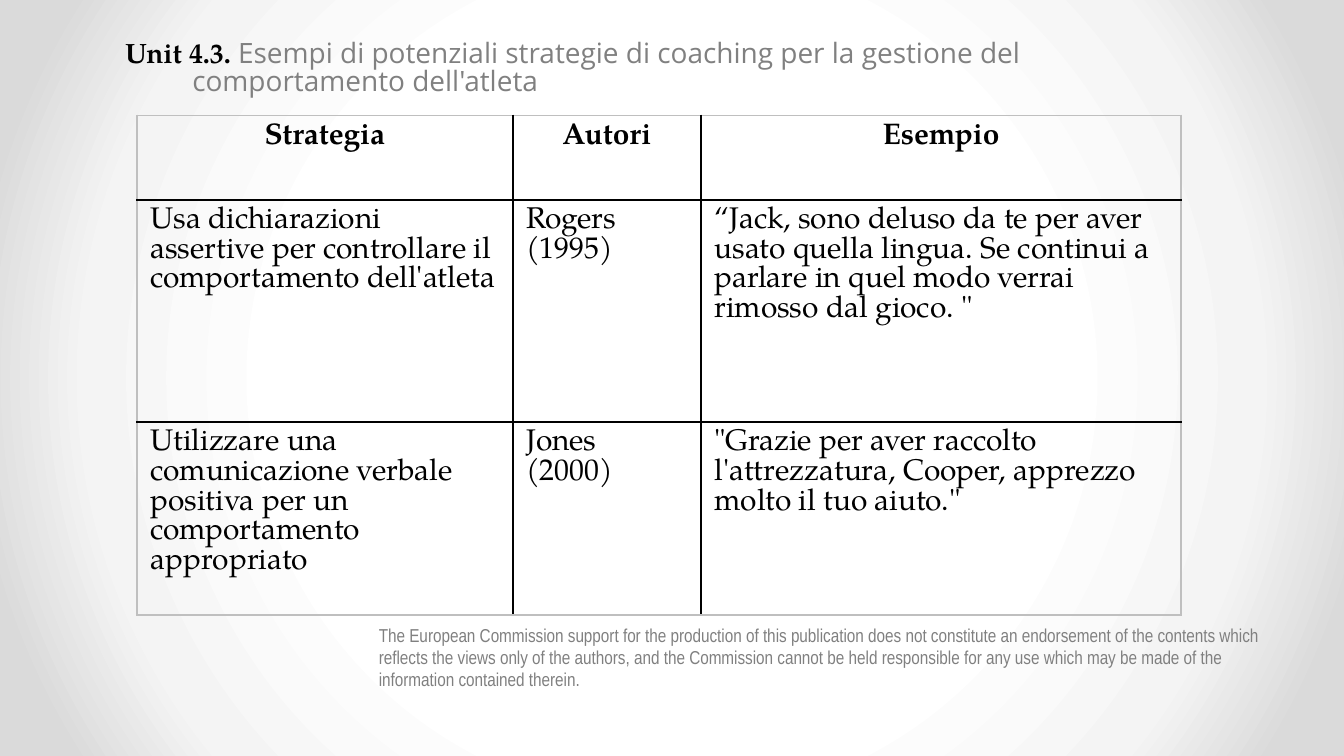
from pptx import Presentation
from pptx.dml.color import RGBColor
from pptx.enum.text import MSO_ANCHOR, MSO_AUTO_SIZE, PP_ALIGN
from pptx.oxml import parse_xml
from pptx.util import Cm, Pt

LEFT, CENTER = PP_ALIGN.LEFT, PP_ALIGN.CENTER
MIDDLE, TOP = MSO_ANCHOR.MIDDLE, MSO_ANCHOR.TOP
NO_AUTOFIT = MSO_AUTO_SIZE.NONE
NAMESPACES = (
    'xmlns:a="http://schemas.openxmlformats.org/drawingml/2006/main" '
    'xmlns:p="http://schemas.openxmlformats.org/presentationml/2006/main"'
)

# Content
UNIT = "Unit 4.3. "
TOPIC = ("Esempi di potenziali strategie di coaching per la gestione del "
         "comportamento dell'atleta")
ROWS = [
    ("Strategia", "Autori", "Esempio"),
    ("Usa dichiarazioni assertive per controllare il comportamento dell'atleta",
     "Rogers (1995)",
     "“Jack, sono deluso da te per aver usato quella lingua. Se continui a "
     'parlare in quel modo verrai rimosso dal gioco. "'),
    ("Utilizzare una comunicazione verbale positiva per un comportamento appropriato",
     "Jones (2000)",
     '''"Grazie per aver raccolto l'attrezzatura, Cooper, apprezzo molto il tuo aiuto."'''),
]
DISCLAIMER = (
    "The European Commission support for the production of this publication does "
    "not constitute an endorsement of the contents which reflects the views only "
    "of the authors, and the Commission cannot be held responsible for any use "
    "which may be made of the information contained therein."
)

# Layout in centimetres
TITLE_BOX = (2.11, 0.53, 20.65, 1.55)
DISCLAIMER_BOX = (6.91, 11.66, 17.6, 1.7)
TABLE_ORIGIN = (2.59, 2.18)
COLUMN_WIDTHS = (7.1, 3.56, 9.07)
ROW_HEIGHTS = (1.6, 4.2, 3.65)

THEME = {
    "serif": "TeX Gyre Pagella", "sans": "Open Sans", "narrow": "Arial Narrow",
    "ink": "000000", "muted": "808080", "frame": "BFBFBF",
    "title": 15, "table": 16, "disclaimer": 10,
    "background": [(50, "FFFFFF"), (76, "F4F4F4"), (92, "DADADA")],
}


def add_run(paragraph, text, font, size, color, bold=False):
    run = paragraph.add_run()
    run.text = text
    run.font.name = THEME[font]
    run.font.size = Pt(THEME[size])
    run.font.bold = bold
    run.font.color.rgb = RGBColor.from_string(THEME[color])


def set_background(slide):
    stops = "".join(
        f'<a:gs pos="{position * 1000}"><a:srgbClr val="{color}"/></a:gs>'
        for position, color in THEME["background"])
    slide.element.cSld.insert(0, parse_xml(
        f'<p:bg {NAMESPACES}><p:bgPr><a:gradFill rotWithShape="1">'
        f'<a:gsLst>{stops}</a:gsLst><a:path path="circle">'
        '<a:fillToRect l="50000" t="50000" r="50000" b="50000"/></a:path>'
        '</a:gradFill><a:effectLst/></p:bgPr></p:bg>'))


def set_borders(cell, edge_colors):
    properties = cell._tc.get_or_add_tcPr()
    for index, (edge, color) in enumerate(edge_colors.items()):
        properties.insert(index, parse_xml(
            f'<a:ln{edge} {NAMESPACES} w="12700"><a:solidFill>'
            f'<a:srgbClr val="{THEME[color]}"/></a:solidFill></a:ln{edge}>'))


def add_title(slide):
    title = slide.shapes.title
    title.left, title.top, title.width, title.height = map(Cm, TITLE_BOX)
    frame = title.text_frame
    frame.word_wrap = True
    frame.auto_size = NO_AUTOFIT
    frame.vertical_anchor = MIDDLE
    paragraph = frame.paragraphs[0]
    paragraph.alignment = LEFT
    paragraph.line_spacing = 0.85
    # Hanging indent
    indent = Cm(1.27)
    properties = paragraph._p.get_or_add_pPr()
    properties.set("marL", str(indent))
    properties.set("indent", str(-indent))
    add_run(paragraph, UNIT, "serif", "title", "ink", bold=True)
    add_run(paragraph, TOPIC, "sans", "title", "muted")


def add_strategy_table(slide):
    size = (sum(COLUMN_WIDTHS), sum(ROW_HEIGHTS))
    table = slide.shapes.add_table(
        len(ROWS), len(COLUMN_WIDTHS), *map(Cm, TABLE_ORIGIN + size)).table
    table.first_row = table.horz_banding = False
    for column, width in zip(table.columns, COLUMN_WIDTHS):
        column.width = Cm(width)
    for row, height in zip(table.rows, ROW_HEIGHTS):
        row.height = Cm(height)

    last_row, last_column = len(ROWS) - 1, len(COLUMN_WIDTHS) - 1
    for r, texts in enumerate(ROWS):
        for c, text in enumerate(texts):
            cell = table.cell(r, c)
            cell.vertical_anchor = TOP
            cell.fill.background()
            set_borders(cell, {
                "L": "frame" if c == 0 else "ink",
                "R": "frame" if c == last_column else "ink",
                "T": "frame" if r == 0 else "ink",
                "B": "frame" if r == last_row else "ink",
            })
            paragraph = cell.text_frame.paragraphs[0]
            paragraph.alignment = CENTER if r == 0 else LEFT
            paragraph.line_spacing = Pt(THEME["table"])
            add_run(paragraph, text, "serif", "table", "ink", bold=r == 0)


def add_disclaimer(slide):
    frame = slide.shapes.add_textbox(*map(Cm, DISCLAIMER_BOX)).text_frame
    frame.word_wrap = True
    add_run(frame.paragraphs[0], DISCLAIMER, "narrow", "disclaimer", "muted")


def main():
    presentation = Presentation()
    presentation.slide_width, presentation.slide_height = Cm(25.4), Cm(14.29)
    slide = presentation.slides.add_slide(presentation.slide_layouts[5])
    set_background(slide)
    add_disclaimer(slide)
    add_strategy_table(slide)
    add_title(slide)
    presentation.save("out.pptx")


if __name__ == "__main__":
    main()
